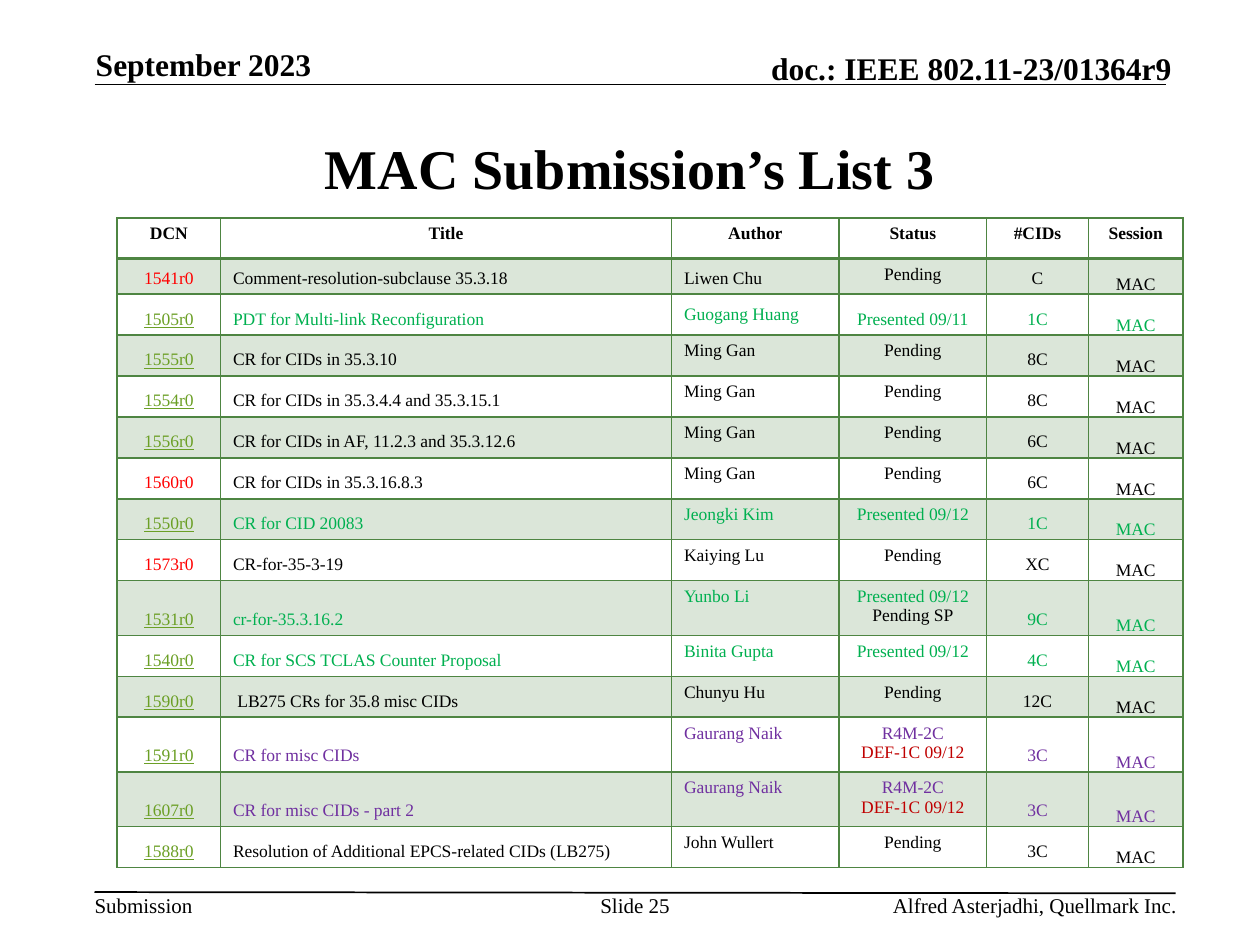
from lxml import etree
from pptx import Presentation
from pptx.dml.color import RGBColor
from pptx.enum.shapes import MSO_CONNECTOR
from pptx.enum.text import MSO_ANCHOR, PP_ALIGN
from pptx.oxml.ns import qn
from pptx.util import Inches, Pt

LEFT, CENTER, RIGHT = PP_ALIGN.LEFT, PP_ALIGN.CENTER, PP_ALIGN.RIGHT
TOP, MIDDLE, BOTTOM = MSO_ANCHOR.TOP, MSO_ANCHOR.MIDDLE, MSO_ANCHOR.BOTTOM
STRAIGHT = MSO_CONNECTOR.STRAIGHT

FONT = "Times New Roman"
COLORS = {
    "black": "000000",
    "red": "FF0000",
    "link": "6B9F25",
    "green": "00B050",
    "purple": "7030A0",
    "dark red": "C00000",
    "table": "4E8542",
}

HEADERS = ["DCN", "Title", "Author", "Status", "#CIDs", "Session"]
COLUMN_WIDTHS = [0.82, 3.58, 1.33, 1.17, 0.81, 0.75]
COLUMN_ALIGNMENTS = [CENTER, LEFT, LEFT, CENTER, CENTER, CENTER]
COLUMN_ANCHORS = [BOTTOM, BOTTOM, TOP, TOP, BOTTOM, BOTTOM]
SESSION_COLUMN = 5
ROW_HEIGHT = Inches(1.3) // 4
FIRST_ENTRY_HEIGHT = Inches(0.28)

# DCN, DCN colour, title, author, status lines, CIDs, row colour
SUBMISSIONS = [
    ("1541r0", "red", "Comment-resolution-subclause 35.3.18", "Liwen Chu", "Pending", "C", "black"),
    ("1505r0", "link", "PDT for Multi-link Reconfiguration", "Guogang Huang", "Presented 09/11", "1C", "green"),
    ("1555r0", "link", "CR for CIDs in 35.3.10", "Ming Gan", "Pending", "8C", "black"),
    ("1554r0", "link", "CR for CIDs in 35.3.4.4 and 35.3.15.1", "Ming Gan", "Pending", "8C", "black"),
    ("1556r0", "link", "CR for CIDs in AF, 11.2.3 and 35.3.12.6", "Ming Gan", "Pending", "6C", "black"),
    ("1560r0", "red", "CR for CIDs in 35.3.16.8.3", "Ming Gan", "Pending", "6C", "black"),
    ("1550r0", "link", "CR for CID 20083", "Jeongki Kim", "Presented 09/12", "1C", "green"),
    ("1573r0", "red", "CR-for-35-3-19", "Kaiying Lu", "Pending", "XC", "black"),
    ("1531r0", "link", "cr-for-35.3.16.2", "Yunbo Li", "Presented 09/12\nPending SP", "9C", "green"),
    ("1540r0", "link", "CR for SCS TCLAS Counter Proposal", "Binita Gupta", "Presented 09/12", "4C", "green"),
    ("1590r0", "link", " LB275 CRs for 35.8 misc CIDs", "Chunyu Hu", "Pending", "12C", "black"),
    ("1591r0", "link", "CR for misc CIDs", "Gaurang Naik", "R4M-2C\nDEF-1C 09/12", "3C", "purple"),
    ("1607r0", "link", "CR for misc CIDs - part 2", "Gaurang Naik", "R4M-2C\nDEF-1C 09/12", "3C", "purple"),
    ("1588r0", "link", "Resolution of Additional EPCS-related CIDs (LB275)", "John Wullert", "Pending", "3C", "black"),
]
SECOND_LINE_COLORS = {"Pending SP": "dark_default", "DEF-1C 09/12": "dark red"}
SECOND_LINE_COLORS["Pending SP"] = "black"
# (row, column) cells anchored differently from their column
ANCHOR_EXCEPTIONS = {(1, 2): BOTTOM, (2, 2): MIDDLE, (2, 3): BOTTOM}


def format_paragraph(paragraph, size, color="black", bold=False, alignment=LEFT):
    paragraph.alignment = alignment
    for run in paragraph.runs:
        font = run.font
        font.name = FONT
        font.size = Pt(size)
        font.bold = bold
        font.underline = color == "link"
        font.color.rgb = RGBColor.from_string(COLORS[color])


def add_text(slide, text, left, top, width, height, size, bold=False,
             alignment=LEFT, anchor=TOP, wrap=True):
    box = slide.shapes.add_textbox(Inches(left), Inches(top), Inches(width), Inches(height))
    frame = box.text_frame
    frame.margin_left = frame.margin_right = frame.margin_top = frame.margin_bottom = 0
    frame.word_wrap = wrap
    frame.vertical_anchor = anchor
    frame.text = text
    format_paragraph(frame.paragraphs[0], size, bold=bold, alignment=alignment)


def add_rule(slide, x1, y1, x2, y2):
    rule = slide.shapes.add_connector(STRAIGHT, Inches(x1), Inches(y1), Inches(x2), Inches(y2))
    rule.line.color.rgb = RGBColor.from_string(COLORS["black"])
    rule.line.width = Pt(1)
    etree.SubElement(rule._element.spPr, qn("a:effectLst"))


def fill_cell(cell, shaded):
    if not shaded:
        cell.fill.background()
        return
    cell.fill.solid()
    cell.fill.fore_color.rgb = RGBColor.from_string(COLORS["table"])
    color = cell._tc.tcPr.find(".//" + qn("a:srgbClr"))
    etree.SubElement(color, qn("a:alpha"), val="20000")


def set_borders(cell, row):
    # The rule between the header and the first entry is thicker
    widths = {"lnL": 1, "lnR": 1, "lnT": 2 if row == 1 else 1, "lnB": 2 if row == 0 else 1}
    properties = cell._tc.get_or_add_tcPr()
    for position, (side, width) in enumerate(widths.items()):
        line = etree.Element(qn("a:" + side), w=str(Pt(width)))
        fill = etree.SubElement(line, qn("a:solidFill"))
        etree.SubElement(fill, qn("a:srgbClr"), val=COLORS["table"])
        properties.insert(position, line)


def write_cell(cell, row, column, text, color, alignment, anchor, bold=False):
    cell.text_frame.text = text
    cell.vertical_anchor = anchor
    for paragraph in cell.text_frame.paragraphs:
        line_color = SECOND_LINE_COLORS.get(paragraph.text, color)
        format_paragraph(paragraph, 10, line_color, bold, alignment)
    if row > 0 and column == SESSION_COLUMN:
        cell.margin_left = cell.margin_right = cell.margin_top = cell.margin_bottom = 0
    fill_cell(cell, shaded=row % 2 == 1)
    set_borders(cell, row)


def add_submission_table(slide):
    row_count = len(SUBMISSIONS) + 1
    table = slide.shapes.add_table(
        row_count, len(HEADERS), Inches(0.93), Inches(1.73),
        Inches(sum(COLUMN_WIDTHS)), ROW_HEIGHT * row_count).table
    for column, width in enumerate(COLUMN_WIDTHS):
        table.columns[column].width = Inches(width)
    for row in table.rows:
        row.height = ROW_HEIGHT
    table.rows[1].height = FIRST_ENTRY_HEIGHT

    for column, header in enumerate(HEADERS):
        write_cell(table.cell(0, column), 0, column, header, "black", CENTER, TOP, bold=True)
    for row, (dcn, dcn_color, title, author, status, cids, color) in enumerate(SUBMISSIONS, 1):
        for column, text in enumerate([dcn, title, author, status, cids, "MAC"]):
            anchor = ANCHOR_EXCEPTIONS.get((row, column), COLUMN_ANCHORS[column])
            write_cell(table.cell(row, column), row, column, text,
                       dcn_color if column == 0 else color,
                       COLUMN_ALIGNMENTS[column], anchor)


def main():
    presentation = Presentation()
    presentation.slide_width = Inches(10)
    presentation.slide_height = Inches(7.5)
    slide = presentation.slides.add_slide(presentation.slide_layouts[6])

    # Header
    add_rule(slide, 0.75, 0.67, 9.25, 0.67)
    add_text(slide, "September 2023", 0.76, 0.36, 2.05, 0.3, 18, bold=True, anchor=BOTTOM)
    add_text(slide, "doc.: IEEE 802.11-23/01364r9", 5.47, 0.39, 3.83, 0.3, 18,
             bold=True, alignment=RIGHT, anchor=BOTTOM)

    # Title and table
    add_text(slide, "MAC Submission’s List 3", 0.75, 0.75, 8.5, 1.16, 32,
             bold=True, alignment=CENTER, anchor=MIDDLE)
    add_submission_table(slide)

    # Footer
    add_rule(slide, 0.75, 7.08, 9.33, 7.09)
    add_text(slide, "Submission", 0.75, 7.08, 0.78, 0.2, 12, wrap=False)
    add_text(slide, "Slide 25", 4.75, 7.08, 0.58, 0.4, 12, alignment=CENTER)
    add_text(slide, "Alfred Asterjadhi, Quellmark Inc.", 5.86, 7.08, 3.48, 0.2, 12, alignment=RIGHT)

    presentation.save("out.pptx")


if __name__ == "__main__":
    main()
